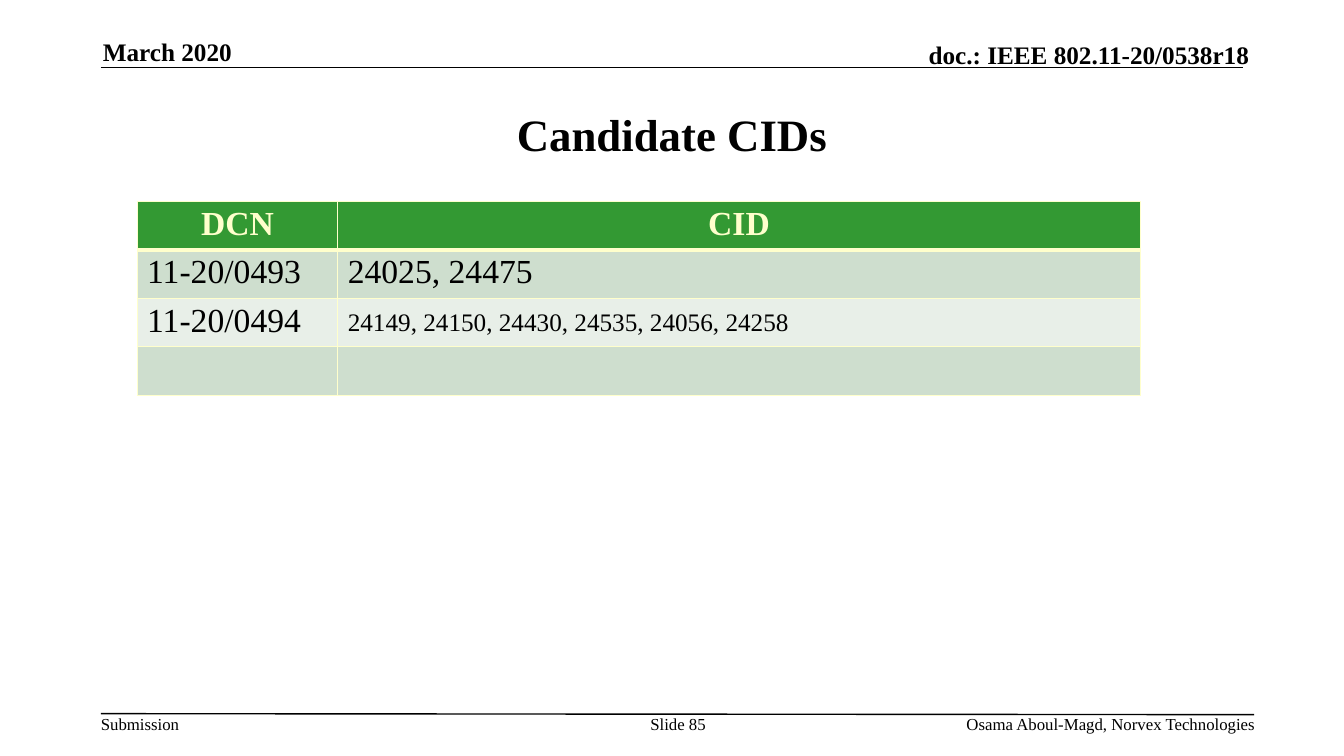
from dataclasses import dataclass

from lxml.etree import SubElement
from pptx import Presentation
from pptx.dml.color import RGBColor
from pptx.enum.shapes import MSO_CONNECTOR
from pptx.enum.text import MSO_ANCHOR as Anchor, PP_ALIGN as Align
from pptx.oxml.ns import qn
from pptx.slide import Slide
from pptx.table import _Cell as Cell
from pptx.text.text import TextFrame
from pptx.util import Inches, Pt


@dataclass(frozen=True)
class Theme:
    font: str = "Times New Roman"
    ink: str = "000000"
    cream: str = "FFFFCC"
    header: str = "339933"
    bands: tuple[str, str] = ("CEDECE", "E8EFE8")
    title: int = 32
    table: int = 24
    medium: int = 18
    small: int = 12


@dataclass(frozen=True)
class Label:
    text: str
    box: tuple[float, float, float, float]
    size: int
    bold: bool = False
    align: Align = Align.LEFT
    anchor: Anchor = Anchor.TOP
    wrap: bool = True


@dataclass(frozen=True)
class Rule:
    start: tuple[float, float]
    end: tuple[float, float]


THEME = Theme()
RULES = [Rule((1, 0.67), (12.33, 0.67)), Rule((1, 7.08), (12.44, 7.09))]
LABELS = [
    Label("March 2020", (1.02, 0.36, 2.73, 0.3), THEME.medium, True, anchor=Anchor.BOTTOM),
    Label("doc.: IEEE 802.11-20/0538r18", (7.29, 0.39, 5.1, 0.3), THEME.medium, True,
          Align.RIGHT, Anchor.BOTTOM),
    Label("Submission", (1, 7.08, 0.79, 0.2), THEME.small, wrap=False),
    Label("Slide 85", (6.34, 7.08, 0.77, 0.4), THEME.small, align=Align.CENTER),
    Label("Osama Aboul-Magd, Norvex Technologies", (7.81, 7.08, 4.64, 0.2), THEME.small,
          align=Align.RIGHT),
]
CID_ROWS = [
    ("DCN", "CID"),
    ("11-20/0493", "24025, 24475"),
    ("11-20/0494", "24149, 24150, 24430, 24535, 24056, 24258"),
    ("", ""),
]
COLUMN_WIDTHS = (1.99, 7.96)
ROW_HEIGHT = 0.47
LONG_TEXT = 30


def write(tf: TextFrame, text: str, *, size: int, bold: bool = False,
          color: str = THEME.ink, align: Align = Align.LEFT) -> None:
    p = tf.paragraphs[0]
    p.alignment = align
    p.font.size = Pt(size)
    if text:
        r = p.add_run()
        r.text = text
        r.font.name = THEME.font
        r.font.size = Pt(size)
        r.font.bold = bold
        r.font.color.rgb = RGBColor.from_string(color)


def add_rule(s: Slide, rule: Rule) -> None:
    line = s.shapes.add_connector(MSO_CONNECTOR.STRAIGHT,
                                  *map(Inches, rule.start + rule.end))
    line.line.color.rgb = RGBColor.from_string(THEME.ink)
    line.line.width = Pt(1)
    SubElement(line._element.spPr, qn("a:effectLst"))


def add_label(s: Slide, label: Label) -> None:
    tf = s.shapes.add_textbox(*map(Inches, label.box)).text_frame
    tf.margin_left = tf.margin_top = tf.margin_right = tf.margin_bottom = 0
    tf.word_wrap = label.wrap
    tf.vertical_anchor = label.anchor
    write(tf, label.text, size=label.size, bold=label.bold, align=label.align)


def add_title(s: Slide, text: str) -> None:
    title = s.shapes.title
    title.left, title.top, title.width, title.height = map(Inches, (1, 0.75, 11.33, 1.16))
    title.text_frame.vertical_anchor = Anchor.MIDDLE
    write(title.text_frame, text, size=THEME.title, bold=True, align=Align.CENTER)


def set_borders(cell: Cell, top: int, bottom: int) -> None:
    """Draw the cell edges, with top and bottom widths in points."""
    tc_pr = cell._tc.get_or_add_tcPr()
    for side, width in {"L": 1, "R": 1, "T": top, "B": bottom}.items():
        line = SubElement(tc_pr, qn(f"a:ln{side}"), w=str(Pt(width)))
        fill = SubElement(line, qn("a:solidFill"))
        SubElement(fill, qn("a:srgbClr"), val=THEME.cream)


def add_cid_table(s: Slide) -> None:
    table = s.shapes.add_table(
        len(CID_ROWS), len(COLUMN_WIDTHS), Inches(1.36), Inches(2),
        Inches(sum(COLUMN_WIDTHS)), Inches(ROW_HEIGHT * len(CID_ROWS))).table
    for column, width in zip(table.columns, COLUMN_WIDTHS):
        column.width = Inches(width)
    for i, texts in enumerate(CID_ROWS):
        table.rows[i].height = Inches(ROW_HEIGHT)
        is_header = i == 0
        fill = THEME.header if is_header else THEME.bands[(i - 1) % 2]
        for j, text in enumerate(texts):
            cell = table.cell(i, j)
            cell.margin_top = cell.margin_bottom = Inches(0.04)
            cell.vertical_anchor = Anchor.MIDDLE if len(text) > LONG_TEXT else Anchor.TOP
            set_borders(cell, top=3 if i == 1 else 1, bottom=3 if is_header else 1)
            cell.fill.solid()
            cell.fill.fore_color.rgb = RGBColor.from_string(fill)
            write(cell.text_frame, text,
                  size=THEME.medium if len(text) > LONG_TEXT else THEME.table,
                  bold=is_header,
                  color=THEME.cream if is_header else THEME.ink,
                  align=Align.CENTER if is_header else Align.LEFT)


def main() -> None:
    prs = Presentation()
    prs.slide_width, prs.slide_height = Inches(13.33), Inches(7.5)
    s = prs.slides.add_slide(prs.slide_layouts.get_by_name("Title Only"))
    for rule in RULES:
        add_rule(s, rule)
    add_title(s, "Candidate CIDs")
    for label in LABELS:
        add_label(s, label)
    add_cid_table(s)
    prs.save("out.pptx")


if __name__ == "__main__":
    main()
